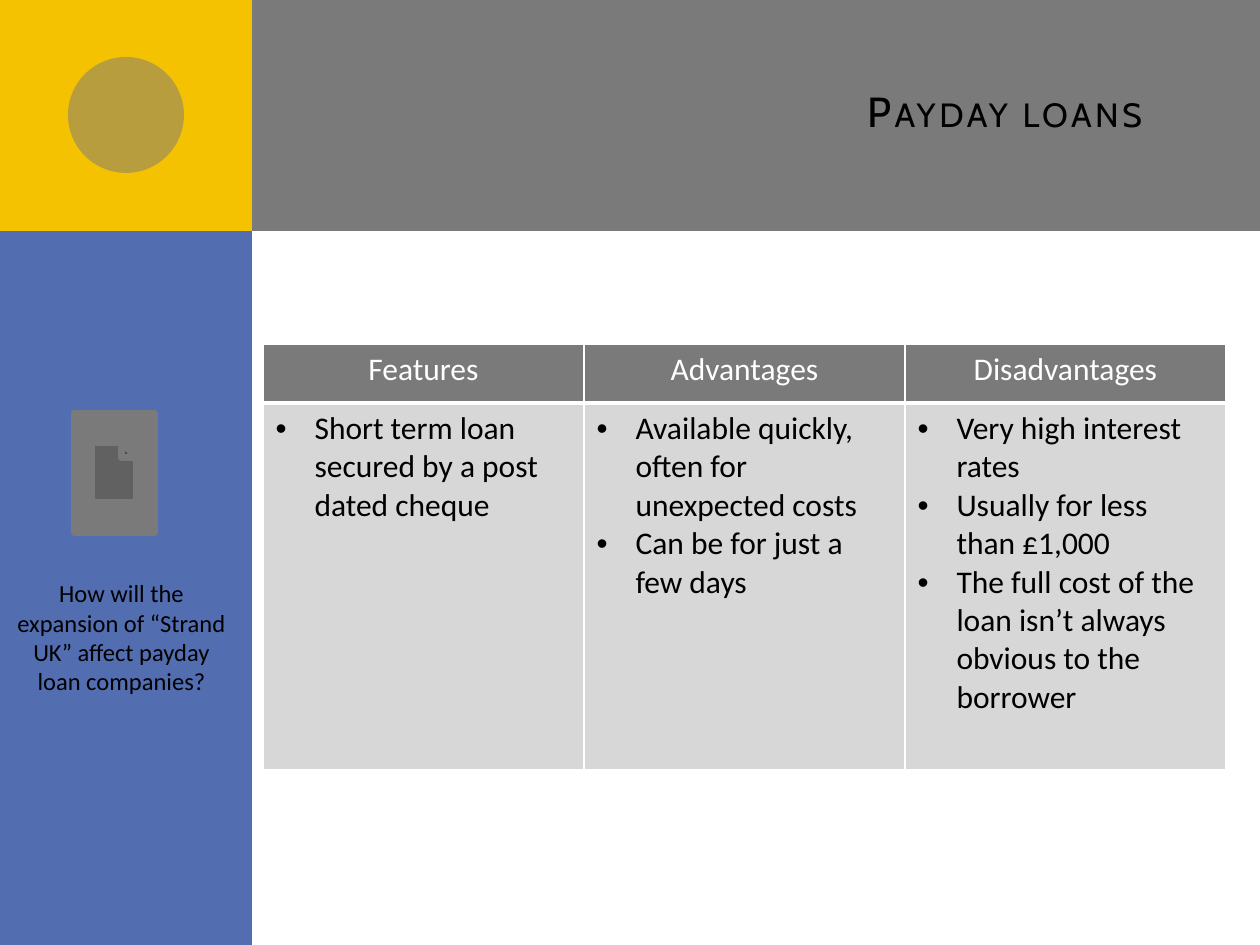
from lxml.etree import SubElement
from pptx import Presentation
from pptx.dml.color import RGBColor
from pptx.enum.shapes import MSO_SHAPE
from pptx.enum.text import MSO_ANCHOR, PP_ALIGN
from pptx.oxml import parse_xml
from pptx.oxml.ns import nsdecls, qn
from pptx.util import Pt

PX_PER_INCH = 126
COLORS = {
    "grey": "7A7A7A",
    "blue": "526DB0",
    "yellow": "F5C201",
    "cell": "D7D7D7",
    "white": "FFFFFF",
    "black": "000000",
}
LOAN_POINTS = {
    "Features": ["Short term loan secured by a post dated cheque"],
    "Advantages": [
        "Available quickly, often for unexpected costs",
        "Can be for just a few days",
    ],
    "Disadvantages": [
        "Very high interest rates",
        "Usually for less than £1,000",
        "The full cost of the loan isn’t always obvious to the borrower",
    ],
}


def px(length):
    return round(length * 914400 / PX_PER_INCH)


def color(name):
    return RGBColor.from_string(COLORS[name])


def write(frame, lines, size=18, font="Calibri", ink="black",
          align=PP_ALIGN.LEFT, bullet=False, spacing=0, small_caps=False):
    frame.word_wrap = True
    for index, line in enumerate(lines):
        paragraph = frame.paragraphs[0] if index == 0 else frame.add_paragraph()
        paragraph.alignment = align
        run = paragraph.add_run()
        run.text = line
        run.font.size = Pt(size)
        run.font.name = font
        run.font.bold = False
        run.font.color.rgb = color(ink)
        if spacing:
            run.font._element.set("spc", str(spacing * 100))
        if small_caps:
            run.font._element.set("cap", "small")
        if bullet:
            properties = paragraph._p.get_or_add_pPr()
            properties.set("marL", str(px(39)))
            properties.set("indent", str(-px(39)))
            SubElement(properties, qn("a:buFont")).set("typeface", "Arial")
            SubElement(properties, qn("a:buChar")).set("char", "•")


def add_block(slide, preset, box, fill, alpha=None, outline=0):
    block = slide.shapes.add_shape(preset, *map(px, box))
    block.shadow.inherit = False
    block.fill.solid()
    block.fill.fore_color.rgb = color(fill)
    if alpha is not None:
        tint = block.fill._xPr.find(".//" + qn("a:srgbClr"))
        SubElement(tint, qn("a:alpha")).set("val", str(alpha * 1000))
    if outline:
        block.line.color.rgb = color(fill)
        block.line.width = Pt(outline)
    else:
        block.line.fill.background()


def set_borders(cell, **widths):
    properties = cell._tc.get_or_add_tcPr()
    for index, (side, width) in enumerate(widths.items()):
        properties.insert(index, parse_xml(
            f'<a:ln{side} {nsdecls("a")} w="{Pt(width)}"><a:solidFill>'
            f'<a:srgbClr val="{COLORS["white"]}"/></a:solidFill></a:ln{side}>'))


def add_header(slide, box, badge_width):
    left, top, width, height = box
    add_block(slide, MSO_SHAPE.RECTANGLE, box, "grey")
    # Yellow badge with a translucent disc in its centre
    add_block(slide, MSO_SHAPE.RECTANGLE, (left, top, badge_width, height), "yellow")
    disc = 116
    add_block(slide, MSO_SHAPE.OVAL,
              (left + (badge_width - disc) // 2, top + (height - disc) // 2, disc, disc),
              "grey", alpha=50)
    # Title, brought in front of the band
    title = slide.shapes.title
    slide.shapes._spTree.append(title._element)
    title.left, title.top = px(left + 336), px(top + 32)
    title.width, title.height = px(861), px(157)
    title.text_frame.vertical_anchor = MSO_ANCHOR.MIDDLE
    write(title.text_frame, ["Payday loans"], size=24, font="Cabin",
          align=PP_ALIGN.RIGHT, spacing=2, small_caps=True)


def add_sidebar(slide, box):
    left, top, width, height = box
    add_block(slide, MSO_SHAPE.RECTANGLE, box, "blue")
    # Document button
    add_block(slide, MSO_SHAPE.ACTION_BUTTON_DOCUMENT,
              (left + 74, top + 182, 80, 119), "grey", outline=4)
    # Discussion question
    question = slide.shapes.add_textbox(
        px(left), px(top + 341), px(width - 9), px(131))
    write(question.text_frame,
          ["How will the expansion of “Strand UK” affect payday loan companies?"],
          size=14, align=PP_ALIGN.CENTER)


def add_loan_table(slide, box, header_height):
    left, top, width, height = box
    table = slide.shapes.add_table(2, len(LOAN_POINTS), *map(px, box)).table
    table.rows[0].height = px(header_height)
    table.rows[1].height = px(height - header_height)
    for column, (heading, points) in enumerate(LOAN_POINTS.items()):
        table.columns[column].width = px(width // len(LOAN_POINTS))
        header, body = table.cell(0, column), table.cell(1, column)
        for cell, fill in ((header, "grey"), (body, "cell")):
            cell.fill.solid()
            cell.fill.fore_color.rgb = color(fill)
        set_borders(header, L=1, R=1, T=1, B=3)
        set_borders(body, L=1, R=1, T=3, B=1)
        write(header.text_frame, [heading], ink="white", align=PP_ALIGN.CENTER)
        write(body.text_frame, points, bullet=True)


def main():
    presentation = Presentation()
    presentation.slide_width, presentation.slide_height = px(1260), px(945)
    slide = presentation.slides.add_slide(presentation.slide_layouts[5])
    header_height, sidebar_width = 231, 252
    add_header(slide, (0, 0, 1260, header_height), sidebar_width)
    add_sidebar(slide, (0, header_height, sidebar_width, 945 - header_height))
    add_loan_table(slide, (263, 344, 963, 426), header_height=59)
    presentation.save("out.pptx")


if __name__ == "__main__":
    main()
